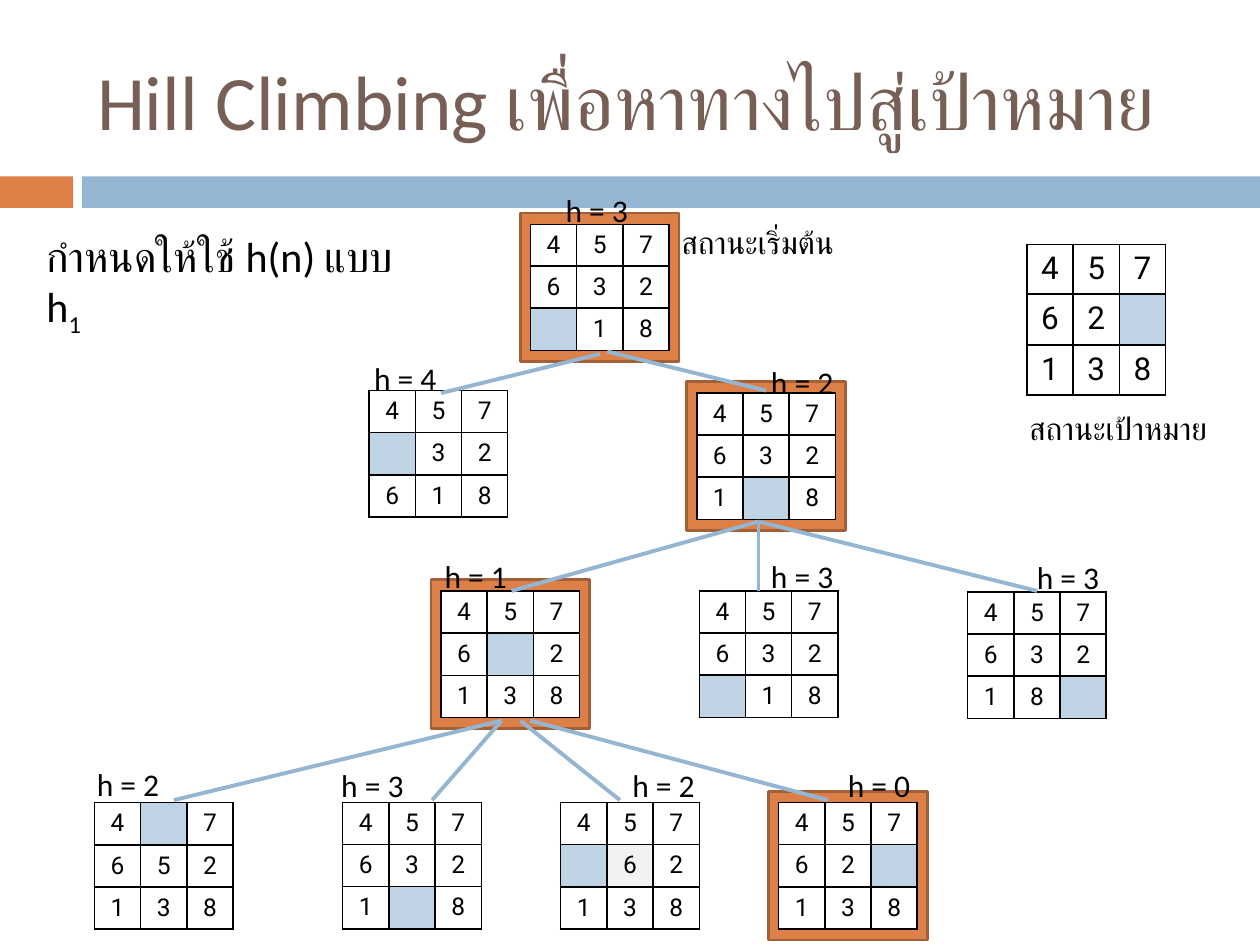
from lxml.etree import SubElement
from pptx import Presentation
from pptx.dml.color import RGBColor
from pptx.enum.shapes import MSO_CONNECTOR, MSO_SHAPE
from pptx.enum.text import MSO_ANCHOR, MSO_AUTO_SIZE, PP_ALIGN
from pptx.oxml.ns import qn
from pptx.util import Inches, Pt

COLORS = {
    "orange": "DD8047", "frame": "A35F35", "blue": "94B6D2", "blank": "BFD3E4",
    "title": "775F55", "black": "000000", "white": "FFFFFF", "gray": "F2F2F2",
}
COLUMNS, ROWS = 100, 75

presentation = Presentation()
presentation.slide_width, presentation.slide_height = Inches(10), Inches(7.5)
slide = presentation.slides.add_slide(presentation.slide_layouts[5])
shapes = slide.shapes


def place(*units):
    """Turn alternating grid columns and rows into slide lengths."""
    column = presentation.slide_width / COLUMNS
    row = presentation.slide_height / ROWS
    return [round(unit * (row if index % 2 else column)) for index, unit in enumerate(units)]


def write(paragraph, text, color="black", **format_values):
    run = paragraph.add_run()
    run.text = text
    run.font.color.rgb = RGBColor.from_string(COLORS[color])
    for name, value in format_values.items():
        setattr(run.font, name, value)
    return run


# Tree boards: left, top, rows of digits ("_" is the blank), on the chosen path
boards = [
    (42.1, 17.8, "457 632 _18", True),
    (29.3, 31, "457 _32 618", False),
    (55.3, 31.2, "457 632 1_8", True),
    (35, 46.9, "457 6_2 138", True),
    (55.5, 46.9, "457 632 _18", False),
    (76.8, 47, "457 632 18_", False),
    (7.5, 63.7, "4_7 652 138", False),
    (27.2, 63.7, "457 632 1_8", False),
    (44.5, 63.7, "457 _62 138", False),
    (61.8, 63.7, "457 62_ 138", True),
]
goal = (81.5, 19.4, "457 62_ 138", False)
shaded_cell = (44.5, 1, 1)  # left of its board, row, column

# Header bars and frames around the chosen path
rectangles = [
    (place(0, 14, 5.8, 2.5), "orange", None),
    (place(6.5, 14, 93.5, 2.5), "blue", None),
]
for left, top, digits, chosen in boards:
    if chosen:
        rectangles.append((place(left - 0.8, top - 0.9, 12.6, 11.8), "orange", "frame"))
for box, fill, line in rectangles:
    shape = shapes.add_shape(MSO_SHAPE.RECTANGLE, *box)
    shape.shadow.inherit = False
    shape.fill.solid()
    shape.fill.fore_color.rgb = RGBColor.from_string(COLORS[fill])
    if line:
        shape.line.color.rgb = RGBColor.from_string(COLORS[line])
        shape.line.width = Pt(1.5)
    else:
        shape.line.fill.background()

# Title
title = shapes.title
title.left, title.top, title.width, title.height = place(6.7, 2.5, 89.2, 10.8)
title.text_frame.auto_size = MSO_AUTO_SIZE.NONE
title.text_frame.vertical_anchor = MSO_ANCHOR.MIDDLE
title.text_frame.paragraphs[0].alignment = PP_ALIGN.LEFT
write(title.text_frame.paragraphs[0], "Hill Climbing เพื่อหาทางไปสู่เป้าหมาย", "title",
      size=Pt(44), name="Calibri")

# Puzzle boards
for left, top, digits, chosen in boards + [goal]:
    is_goal = (left, top) == goal[:2]
    size, height = (18, 11.8) if is_goal else (14, 10)
    table = shapes.add_table(3, 3, *place(left, top, 11, height)).table
    table.first_row = table.horz_banding = False
    for row, line in enumerate(digits.split()):
        for column, digit in enumerate(line):
            cell = table.cell(row, column)
            properties = cell._tc.get_or_add_tcPr()
            for side in ("a:lnL", "a:lnR", "a:lnT", "a:lnB"):
                border = SubElement(properties, qn(side), w=str(Pt(1)))
                SubElement(SubElement(border, qn("a:solidFill")), qn("a:srgbClr"),
                           val=COLORS["black"])
            paragraph = cell.text_frame.paragraphs[0]
            paragraph.alignment = PP_ALIGN.CENTER
            fill = "gray" if (left, row, column) == shaded_cell else "white"
            if digit == "_":
                fill = "blank"
                SubElement(paragraph._p, qn("a:endParaRPr"), sz=str(size * 100))
            else:
                write(paragraph, digit, size=Pt(size), name="Roboto")
            cell.fill.solid()
            cell.fill.fore_color.rgb = RGBColor.from_string(COLORS[fill])

# Branches of the tree
branches = [
    (47.6, 28.1, 35, 31.2), (48.2, 27.9, 60.8, 31),
    (60.2, 41.4, 40.6, 46.9), (60.2, 41.4, 60.2, 46.9), (60.2, 41.4, 82.3, 46.9),
    (39.8, 57.2, 13.8, 63.5), (39.8, 57.2, 34.3, 63.5),
    (41.3, 57.2, 49.2, 63.5), (42.1, 57.2, 65.7, 63.5),
]
for ends in branches:
    connector = shapes.add_connector(MSO_CONNECTOR.STRAIGHT, *place(*ends))
    connector.line.color.rgb = RGBColor.from_string(COLORS["blue"])
    connector.line.width = Pt(2.25)
    SubElement(connector._element.spPr, qn("a:effectLst"))

# Labels: left, top, width, height, text, size, subscript
labels = [
    (80.7, 32, 16.5, 4, "สถานะเป้าหมาย", 18, ""),
    (2.7, 17.8, 29.9, 5.1, "กำหนดให้ใช้ h(n) แบบ h", 24, "1"),
    (53.1, 17.2, 16.5, 4, "สถานะเริ่มต้น", 18, ""),
]
heuristics = [
    (43.9, 14.7, 3), (28.7, 28, 4), (60.2, 28.3, 2),
    (34.3, 43.7, 1), (60.2, 43.7, 3), (81.3, 43.8, 3),
    (6.7, 60.2, 2), (26.1, 60.3, 3), (49.2, 60.3, 2), (66.3, 60.3, 0),
]
labels += [(left, top, 10.5, 4, f"h = {value}", 18, "") for left, top, value in heuristics]
for left, top, width, height, text, size, subscript in labels:
    text_frame = shapes.add_textbox(*place(left, top, width, height)).text_frame
    text_frame.word_wrap = True
    text_frame.auto_size = MSO_AUTO_SIZE.SHAPE_TO_FIT_TEXT
    paragraph = text_frame.paragraphs[0]
    write(paragraph, text, size=Pt(size), name="Calibri")
    if subscript:
        run = write(paragraph, subscript, size=Pt(size), name="Calibri")
        run.font._element.set("baseline", "-25000")

presentation.save("out.pptx")
